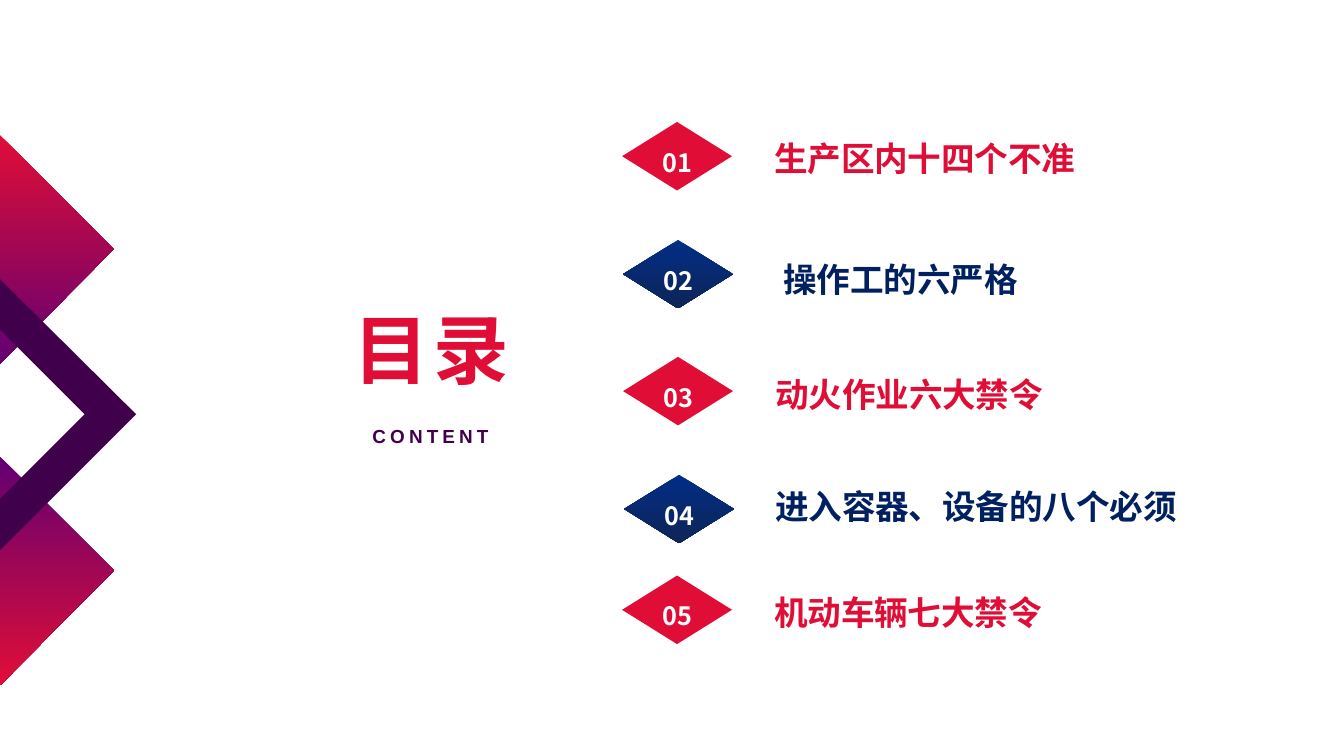
from dataclasses import dataclass

import pptx
import pptx.dml.color
import pptx.enum.dml
import pptx.enum.shapes
import pptx.enum.text
import pptx.oxml
import pptx.oxml.ns
import pptx.util

Inches = pptx.util.Inches
Pt = pptx.util.Pt
Anchor = pptx.enum.text.MSO_ANCHOR
Align = pptx.enum.text.PP_ALIGN

COLORS = {
    "red": "E00E37",
    "purple": "620072",
    "plum": "41004C",
    "caption": "42004C",
    "blue": "012D86",
    "navy": "0E2557",
    "title_blue": "002060",
    "white": "FFFFFF",
}
LATIN_FONT = "Arial"
CHINESE_FONT = "Noto Sans CJK SC"


@dataclass(frozen=True)
class Decoration:
    points: tuple[tuple[float, float], ...]
    colors: tuple[str, ...]


@dataclass(frozen=True)
class TextStyle:
    font: str
    size: float
    color: str
    letter_spacing: float = 0
    align: Align = Align.LEFT
    line_spacing: float = 1.0
    space_before: float = 0
    anchor: Anchor = Anchor.TOP
    bottom_inset: float = 0.05


@dataclass(frozen=True)
class Entry:
    title: str
    diamond_left: float
    diamond_top: float
    title_left: float
    title_top: float
    title_width: float = 3.78
    space_before: float = 0


DECORATIONS = (
    Decoration(((0, 4.53), (1.13, 5.66), (0, 6.8)), ("purple", "red")),
    Decoration(((0, 1.34), (1.13, 2.47), (0, 3.61)), ("red", "purple")),
    Decoration(
        ((1.35, 4.11), (0, 5.46), (0, 4.95), (0.84, 4.11), (0, 3.27), (0, 2.77)),
        ("plum",),
    ),
)
ENTRIES = (
    Entry("生产区内十四个不准", 6.17, 1.21, 7.58, 1.33),
    Entry("操作工的六严格", 6.18, 2.38, 7.67, 2.54),
    Entry("动火作业六大禁令", 6.18, 3.54, 7.59, 3.67),
    Entry("进入容器、设备的八个必须", 6.19, 4.71, 7.59, 4.79, 4.73, 26.4),
    Entry("机动车辆七大禁令", 6.17, 5.71, 7.58, 5.83),
)
HEADING = TextStyle(LATIN_FONT, 54, "red", 3, Align.CENTER, 1.1)
CAPTION = TextStyle(LATIN_FONT, 13.5, "caption", 3, Align.CENTER, 1.3)
NUMBER = TextStyle(
    CHINESE_FONT, 18, "white", 0, Align.CENTER, 1.4, anchor=Anchor.MIDDLE
)


def rgb(name: str) -> pptx.dml.color.RGBColor:
    return pptx.dml.color.RGBColor.from_string(COLORS[name])


def paint(shape, colors: tuple[str, ...]) -> None:
    """Fill with one colour, or with two from top to bottom; no outline."""
    shape.shadow.inherit = False
    shape.line.fill.background()
    if len(colors) == 1:
        shape.fill.solid()
        shape.fill.fore_color.rgb = rgb(colors[0])
        return
    shape.fill.gradient()
    shape.fill.gradient_angle = 270
    for stop, color in zip(shape.fill.gradient_stops, colors):
        stop.color.rgb = rgb(color)


def write(shape, text: str, style: TextStyle) -> None:
    frame = shape.text_frame
    frame.text = text
    frame.word_wrap = True
    frame.vertical_anchor = style.anchor
    frame.margin_bottom = Inches(style.bottom_inset)
    paragraph = frame.paragraphs[0]
    paragraph.alignment = style.align
    paragraph.line_spacing = style.line_spacing
    paragraph.space_before = Pt(style.space_before)
    font = paragraph.runs[0].font
    font.name = style.font
    font.size = Pt(style.size)
    font.bold = True
    font.color.rgb = rgb(style.color)
    for properties in shape.element.iter(pptx.oxml.ns.qn("a:rPr")):
        properties.set("spc", str(round(style.letter_spacing * 100)))
        east_asian = pptx.oxml.parse_xml(
            f'<a:ea {pptx.oxml.ns.nsdecls("a")} typeface="{CHINESE_FONT}"/>'
        )
        properties.find(pptx.oxml.ns.qn("a:latin")).addnext(east_asian)


def add_text(
    slide, text: str, left: float, top: float, width: float, height: float,
    style: TextStyle,
) -> None:
    box = slide.shapes.add_textbox(
        Inches(left), Inches(top), Inches(width), Inches(height)
    )
    write(box, text, style)


def add_decoration(slide, decoration: Decoration) -> None:
    start, *rest = [(Inches(x), Inches(y)) for x, y in decoration.points]
    builder = slide.shapes.build_freeform(*start)
    builder.add_line_segments(rest, close=True)
    paint(builder.convert_to_shape(), decoration.colors)


def add_entry(slide, number: int, entry: Entry) -> None:
    """Draw a numbered diamond and its title; odd ones red, even ones blue."""
    odd = number % 2 == 1
    diamond = slide.shapes.add_shape(
        pptx.enum.shapes.MSO_SHAPE.DIAMOND,
        Inches(entry.diamond_left), Inches(entry.diamond_top),
        Inches(1.09), Inches(0.68),
    )
    paint(diamond, ("red",) if odd else ("blue", "navy"))
    write(diamond, f"{number:02}", NUMBER)
    title_style = TextStyle(
        CHINESE_FONT, 24, "red" if odd else "title_blue", -0.1,
        space_before=entry.space_before,
        anchor=Anchor.MIDDLE if odd else Anchor.BOTTOM,
        bottom_inset=0,
    )
    add_text(
        slide, entry.title, entry.title_left, entry.title_top,
        entry.title_width, 0.43, title_style,
    )


def main() -> None:
    presentation = pptx.Presentation()
    presentation.slide_width = Inches(13.33)
    presentation.slide_height = Inches(7.5)
    slide = presentation.slides.add_slide(presentation.slide_layouts[6])
    for decoration in DECORATIONS:
        add_decoration(slide, decoration)
    add_text(slide, "目录", 3.33, 2.87, 1.9, 1.13, HEADING)
    add_text(slide, "CONTENT", 3.33, 4.1, 1.88, 0.4, CAPTION)
    for number, entry in enumerate(ENTRIES, start=1):
        add_entry(slide, number, entry)
    presentation.save("out.pptx")


if __name__ == "__main__":
    main()
